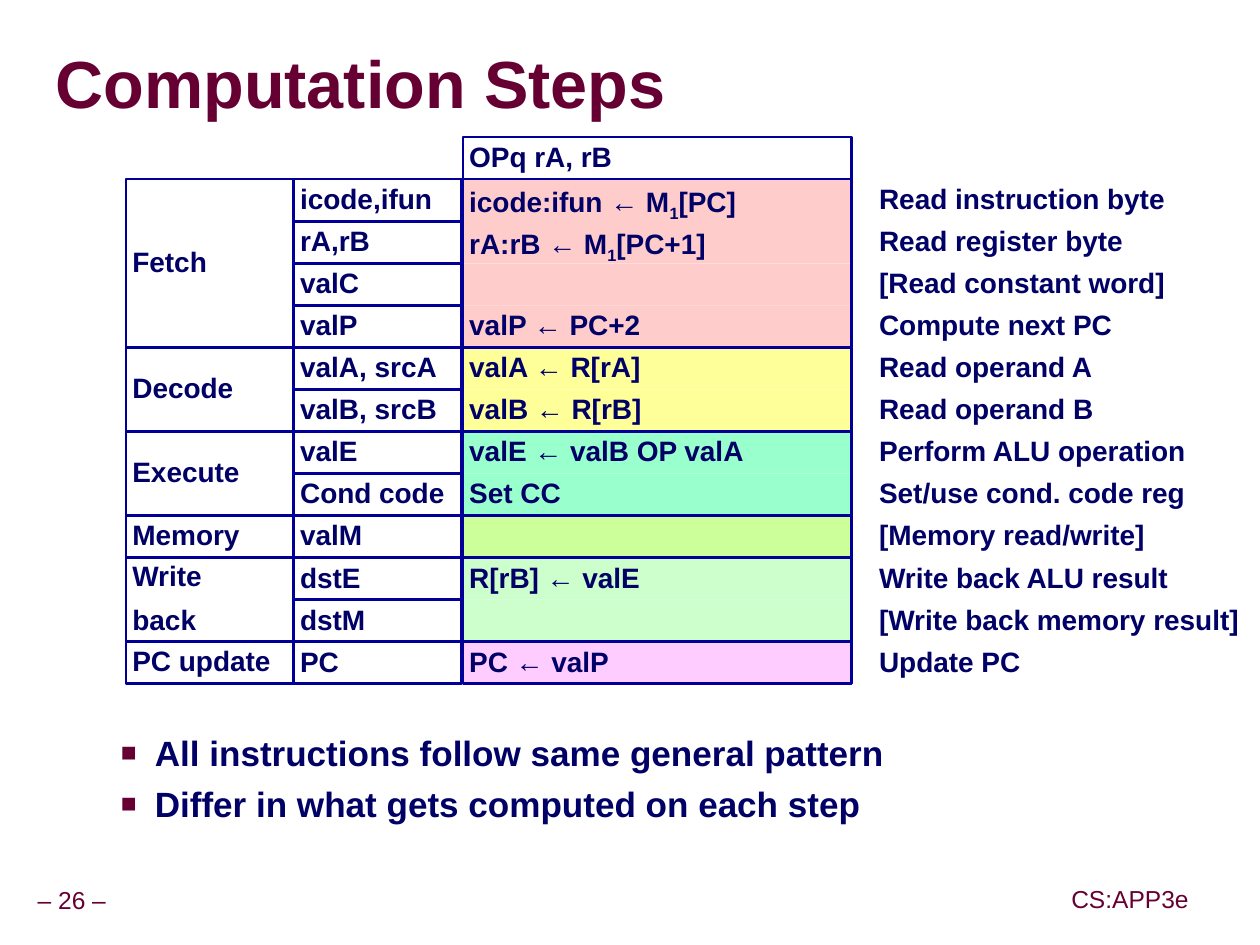
from lxml import etree
from pptx import Presentation
from pptx.dml.color import RGBColor
from pptx.enum import shapes, text
from pptx.oxml import ns
from pptx.util import Inches, Pt

MAROON = RGBColor(0x66, 0x00, 0x33)
NAVY = RGBColor(0x00, 0x00, 0x66)
BLUE = RGBColor(0x00, 0x00, 0x99)
PINK = RGBColor(0xFF, 0xCC, 0xCC)
YELLOW = RGBColor(0xFF, 0xFF, 0x99)
AQUA = RGBColor(0x99, 0xFF, 0xCC)
LIME = RGBColor(0xCC, 0xFF, 0x99)
MINT = RGBColor(0xCC, 0xFF, 0xCC)
ORCHID = RGBColor(0xFF, 0xCC, 0xFF)

TITLE = "Computation Steps"
INSTRUCTION = "OPq rA, rB"
# Stage, colour, rows of (value, computation, meaning); |x| marks a subscript
STAGES = [
    ("Fetch", PINK, [
        ("icode,ifun", "icode:ifun ← M|1|[PC]", "Read instruction byte"),
        ("rA,rB", "rA:rB ← M|1|[PC+1]", "Read register byte"),
        ("valC", "", "[Read constant word]"),
        ("valP", "valP ← PC+2", "Compute next PC")]),
    ("Decode", YELLOW, [
        ("valA, srcA", "valA ← R[rA]", "Read operand A"),
        ("valB, srcB", "valB ← R[rB]", "Read operand B")]),
    ("Execute", AQUA, [
        ("valE", "valE ← valB OP valA", "Perform ALU operation"),
        ("Cond code", "Set CC", "Set/use cond. code reg")]),
    ("Memory", LIME, [("valM", "", "[Memory read/write]")]),
    ("Write\nback", MINT, [
        ("dstE", "R[rB] ← valE", "Write back ALU result"),
        ("dstM", "", "[Write back memory result]")]),
    ("PC update", ORCHID, [("PC", "PC ← valP", "Update PC")]),
]
BULLETS = "All instructions follow same general pattern\nDiffer in what gets computed on each step"
PAGE = "– 26 –"
FOOTER = "CS:APP3e"

TOP, ROW = 1.42, 1 / 3
STAGE_X, VALUE_X, COMPUTE_X, MEANING_X = 1, 2.33, 3.67, 6.92
LABEL_W, WIDE_W = 1.33, 3.08


def add_sub(parent, tag, **attrs):
    return etree.SubElement(parent, ns.qn(tag), attrs)


def write(s, content, size=16, color=NAVY, bold=True, middle=False, center=False,
          wrap=True, inset=0.05, spacing=0.9, before=8):
    """Fill a shape with text: one paragraph per line, |x| as a subscript."""
    tf = s.text_frame
    tf.word_wrap = wrap
    tf.vertical_anchor = text.MSO_ANCHOR.MIDDLE if middle else text.MSO_ANCHOR.TOP
    tf.margin_left = tf.margin_right = tf.margin_top = tf.margin_bottom = Inches(inset)
    for i, line in enumerate(content.split("\n")):
        p = tf.paragraphs[0] if i == 0 else tf.add_paragraph()
        p.alignment = text.PP_ALIGN.CENTER if center else text.PP_ALIGN.LEFT
        p.line_spacing = spacing
        p.space_before = Pt(before)
        for j, part in enumerate(line.split("|")):
            r = p.add_run()
            r.text = part
            r.font.name, r.font.size, r.font.bold = "Arial", Pt(size), bold
            r.font.color.rgb = color
            if j % 2:
                r.font._element.set("baseline", "-25000")
    return tf


def add_text(x, y, w, h, content, **fmt):
    s = slide.shapes.add_textbox(Inches(x), Inches(y), Inches(w), Inches(h))
    return write(s, content, **fmt)


def add_cell(x, y, w, h, content="", fill=None, line=BLUE, middle=False):
    s = slide.shapes.add_shape(shapes.MSO_SHAPE.RECTANGLE,
                               Inches(x), Inches(y), Inches(w), Inches(h))
    s.shadow.inherit = False
    if fill is None:
        s.fill.background()
    else:
        s.fill.solid()
        s.fill.fore_color.rgb = fill
    if line is None:
        s.line.fill.background()
    else:
        s.line.color.rgb = line
        s.line.width = Pt(1.5)
    if content:
        write(s, content, middle=middle)


def add_text_shadow(tf):
    effects = etree.Element(ns.qn("a:effectLst"))
    shadow = add_sub(effects, "a:outerShdw", blurRad="38100", dist="38100",
                     dir="2700000", algn="tl")
    add_sub(shadow, "a:srgbClr", val="C0C0C0")
    tf.paragraphs[0].runs[0].font._element.find(ns.qn("a:solidFill")).addnext(effects)


def add_bullets(tf):
    for p in tf.paragraphs:
        pPr = p._p.get_or_add_pPr()
        pPr.set("marL", str(Inches(0.81)))
        pPr.set("indent", str(Inches(-0.27)))
        add_sub(add_sub(pPr, "a:buClr"), "a:srgbClr", val=str(MAROON))
        add_sub(pPr, "a:buSzPct", val="75000")
        add_sub(pPr, "a:buFont", typeface="Arial")
        add_sub(pPr, "a:buChar", char="■")


prs = Presentation()
prs.slide_width, prs.slide_height = Inches(9.99), Inches(7.49)
slide = prs.slides.add_slide(prs.slide_layouts[6])

footer_format = dict(size=14, color=MAROON, bold=False, middle=True, center=True, wrap=False)
add_text(0.24, 6.99, 0.66, 0.31, PAGE, **footer_format)
add_text(8.44, 6.98, 1.04, 0.32, FOOTER, **footer_format)
add_text_shadow(add_text(0.44, 0.27, 9.52, 0.85, TITLE, size=38, color=MAROON,
                         middle=True, inset=0, spacing=0.87, before=0))
body = add_text(0.32, 5.75, 9.07, 1.28, BULLETS, size=20, spacing=1, before=5)
body.margin_left = body.margin_right = Inches(0.1)
add_bullets(body)

add_cell(COMPUTE_X, TOP - ROW, WIDE_W, ROW, INSTRUCTION)
y = TOP
for stage, color, rows in STAGES:
    height = len(rows) * ROW
    for i, (value, computation, meaning) in enumerate(rows):
        row_y = y + i * ROW
        add_cell(COMPUTE_X, row_y, WIDE_W, ROW, computation, fill=color, line=None)
        add_cell(VALUE_X, row_y, LABEL_W, ROW, value)
        add_text(MEANING_X, row_y, WIDE_W, ROW, meaning)
    add_cell(COMPUTE_X, y, WIDE_W, height)
    add_cell(STAGE_X, y, LABEL_W, height, stage, middle=True)
    y += height

prs.save("out.pptx")
